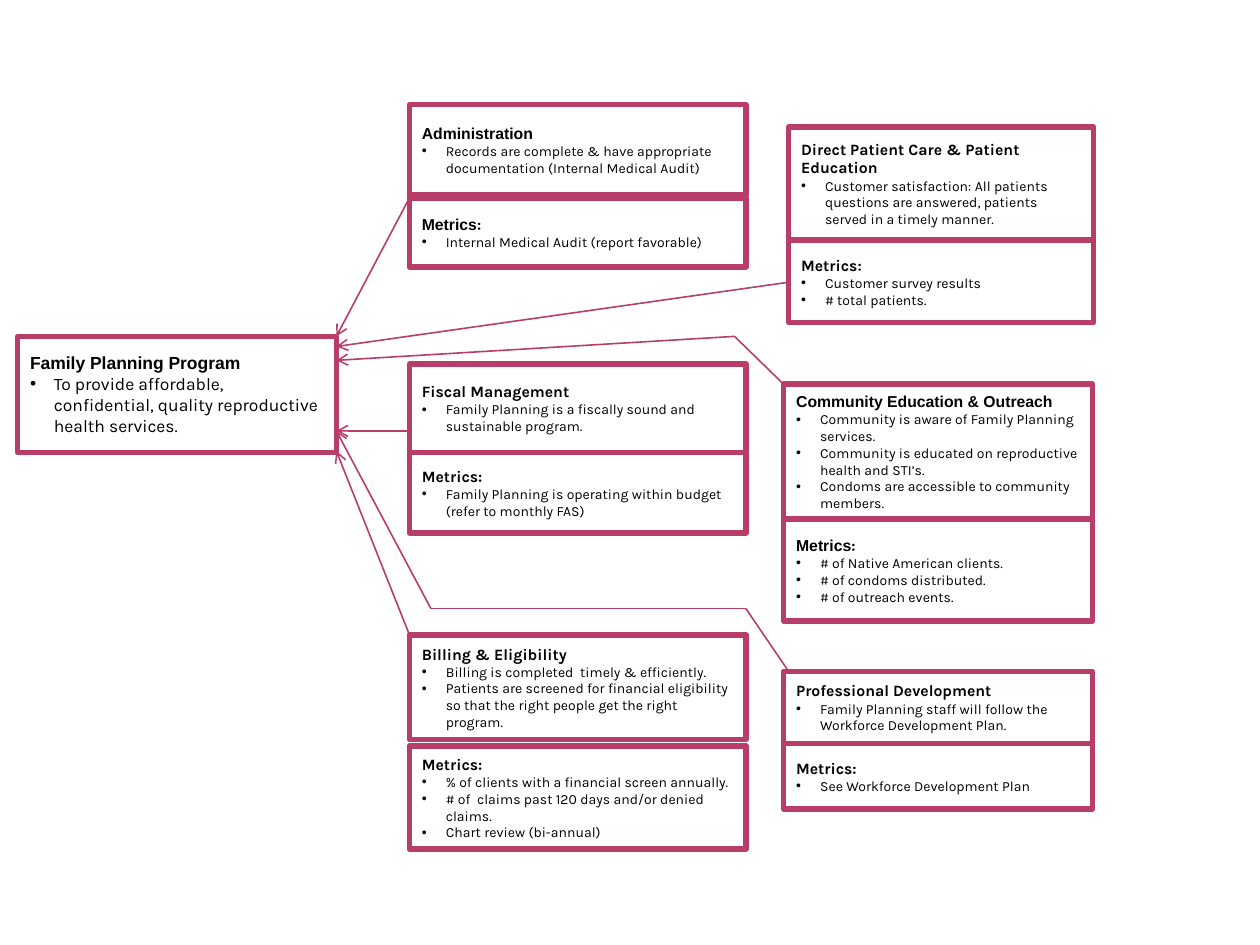
from dataclasses import dataclass
from itertools import pairwise

from lxml.etree import SubElement
from pptx import Presentation
from pptx.dml.color import RGBColor
from pptx.enum.shapes import MSO_CONNECTOR, MSO_SHAPE
from pptx.enum.text import MSO_ANCHOR, PP_ALIGN
from pptx.oxml.ns import qn
from pptx.util import Inches, Pt


@dataclass(frozen=True)
class Theme:
    rose: RGBColor = RGBColor(0xB8, 0x3D, 0x68)
    white: RGBColor = RGBColor(255, 255, 255)
    black: RGBColor = RGBColor(0, 0, 0)
    body: str = "Karla"
    alt: str = "Arial"
    goal: int = 10
    head: int = 9
    item: int = 8
    frame: float = 3.15
    line: float = 0.9
    hang: float = 0.19


class Chart:
    """Draws on a grid of 10 columns by 7.5 rows."""
    cols, rows = 10, 7.5

    def __init__(self, deck, theme):
        self.theme = theme
        self.slide = deck.slides.add_slide(deck.slide_layouts[6])
        self.col = deck.slide_width / self.cols
        self.row = deck.slide_height / self.rows

    def spot(self, x, y):
        return round(x * self.col), round(y * self.row)

    def style(self, font, face, size, bold=False):
        font.name, font.size, font.bold = face, Pt(size), bold
        font.color.rgb = self.theme.black

    def bullet(self, para):
        props = para._p.get_or_add_pPr()
        hang = Inches(self.theme.hang)
        props.set("marL", str(hang))
        props.set("indent", str(-hang))
        SubElement(props, qn("a:buFont")).set("typeface", self.theme.alt)
        SubElement(props, qn("a:buChar")).set("char", "•")

    def box(self, x, y, wide, high, head, items, face, sizes=None):
        t = self.theme
        big, small = sizes or (t.head, t.item)
        shape = self.slide.shapes.add_shape(
            MSO_SHAPE.RECTANGLE, *self.spot(x, y), *self.spot(wide, high))
        shape.shadow.inherit = False
        shape.fill.solid()
        shape.fill.fore_color.rgb = t.white
        shape.line.color.rgb = t.rose
        shape.line.width = Pt(t.frame)
        frame = shape.text_frame
        frame.word_wrap = True
        frame.vertical_anchor = MSO_ANCHOR.MIDDLE
        frame.text = "\n".join([head.rstrip(":"), *items])
        first, *rest = frame.paragraphs
        first.alignment = PP_ALIGN.LEFT
        self.style(first.runs[0].font, face, big, True)
        if head.endswith(":"):
            colon = first.add_run()
            colon.text = ":"
            self.style(colon.font, t.body, big, True)
        for para in rest:
            para.alignment = PP_ALIGN.LEFT
            self.bullet(para)
            self.style(para.runs[0].font, t.body, small)

    def pair(self, x, wide, tops, highs, head, goals, metrics, faces):
        """A goal box with its metrics box below."""
        heads = (head, "Metrics:")
        for y, high, name, items, face in zip(
                tops, highs, heads, (goals, metrics), faces):
            self.box(x, y, wide, high, name, items, face)

    def arrow(self, *points):
        """Straight parts through the points, with a head at the last."""
        for start, end in pairwise(points):
            line = self.slide.shapes.add_connector(
                MSO_CONNECTOR.STRAIGHT, *self.spot(*start), *self.spot(*end))
            line.line.color.rgb = self.theme.rose
            line.line.width = Pt(self.theme.line)
            if end == points[-1]:
                SubElement(line.line._get_or_add_ln(),
                           qn("a:tailEnd")).set("type", "arrow")
            SubElement(line._element.spPr, qn("a:effectLst"))


def main():
    deck = Presentation()
    deck.slide_width, deck.slide_height = Inches(10), Inches(7.5)
    theme = Theme()
    chart = Chart(deck, theme)
    body, alt = theme.body, theme.alt
    mid, wide = 3.25, 2.67
    right, span = 6.22, 2.45
    care = 6.26
    edge = 2.67

    # Program goal
    chart.box(0.14, 2.67, 2.53, 0.92, "Family Planning Program",
              ["To provide affordable, confidential, quality reproductive "
               "health services."], alt, (theme.goal, theme.goal))

    # Middle column
    chart.pair(mid, wide, (0.83, 1.57), (0.72, 0.55), "Administration",
               ["Records are complete & have appropriate documentation "
                "(Internal Medical Audit)"],
               ["Internal Medical Audit (report favorable)"], (alt, alt))
    chart.pair(mid, wide, (2.89, 3.59), (0.7, 0.64), "Fiscal Management",
               ["Family Planning is a fiscally sound and sustainable program."],
               ["Family Planning is operating within budget "
                "(refer to monthly FAS)"], (body, body))
    chart.pair(mid, wide, (5.04, 5.92), (0.83, 0.82), "Billing & Eligibility",
               ["Billing is completed  timely & efficiently.",
                "Patients are screened for financial eligibility so that "
                "the right people get the right program."],
               ["% of clients with a financial screen annually.",
                "# of  claims past 120 days and/or denied claims.",
                "Chart review (bi-annual)"], (body, body))

    # Right column
    chart.pair(care, 2.42, (1.01, 1.91), (0.89, 0.65),
               "Direct Patient Care & Patient Education",
               ["Customer satisfaction: All patients questions are answered, "
                "patients served in a timely manner."],
               ["Customer survey results", "# total patients."], (body, body))
    chart.pair(right, span, (3.05, 4.12), (1.07, 0.81),
               "Community Education & Outreach",
               ["Community is aware of Family Planning services.",
                "Community is educated on reproductive health and STI’s.",
                "Condoms are accessible to community members."],
               ["# of Native American clients.", "# of condoms distributed.",
                "# of outreach events."], (alt, alt))
    chart.pair(right, span, (5.33, 5.9), (0.57, 0.52),
               "Professional Development",
               ["Family Planning staff will follow the Workforce "
                "Development Plan."],
               ["See Workforce Development Plan"], (body, body))

    # Arrows to the program goal
    chart.arrow((mid, 1.57), (edge, 2.67))
    chart.arrow((mid, 3.42), (edge, 3.42))
    chart.arrow((mid, 5.04), (edge, 3.58))
    chart.arrow((care, 2.24), (edge, 2.75))
    chart.arrow((care, 5.33), (5.92, 4.83), (3.42, 4.83), (edge, 3.42))
    chart.arrow((right, 3.05), (5.83, 2.67), (edge, 2.86))

    deck.save("out.pptx")


if __name__ == "__main__":
    main()
